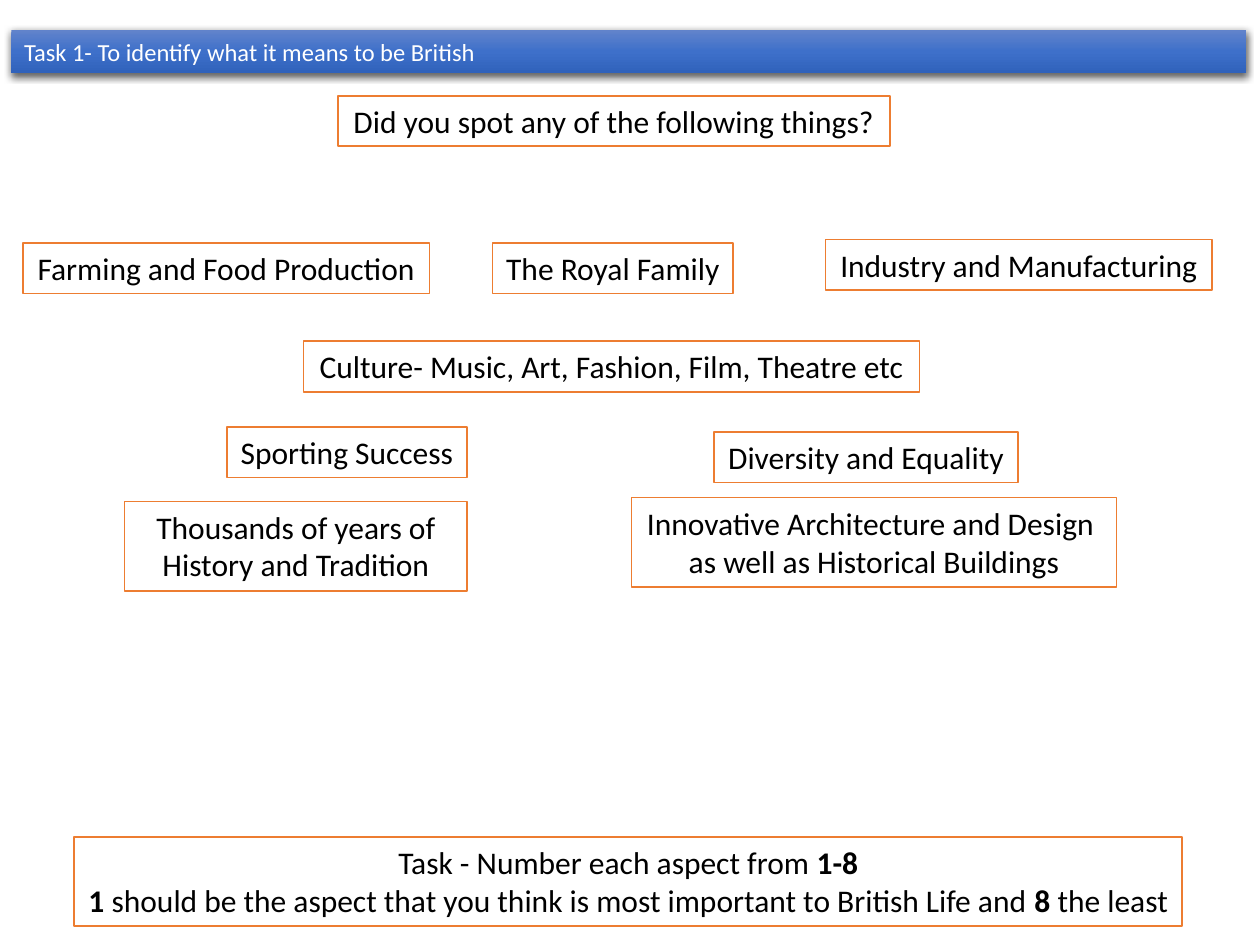
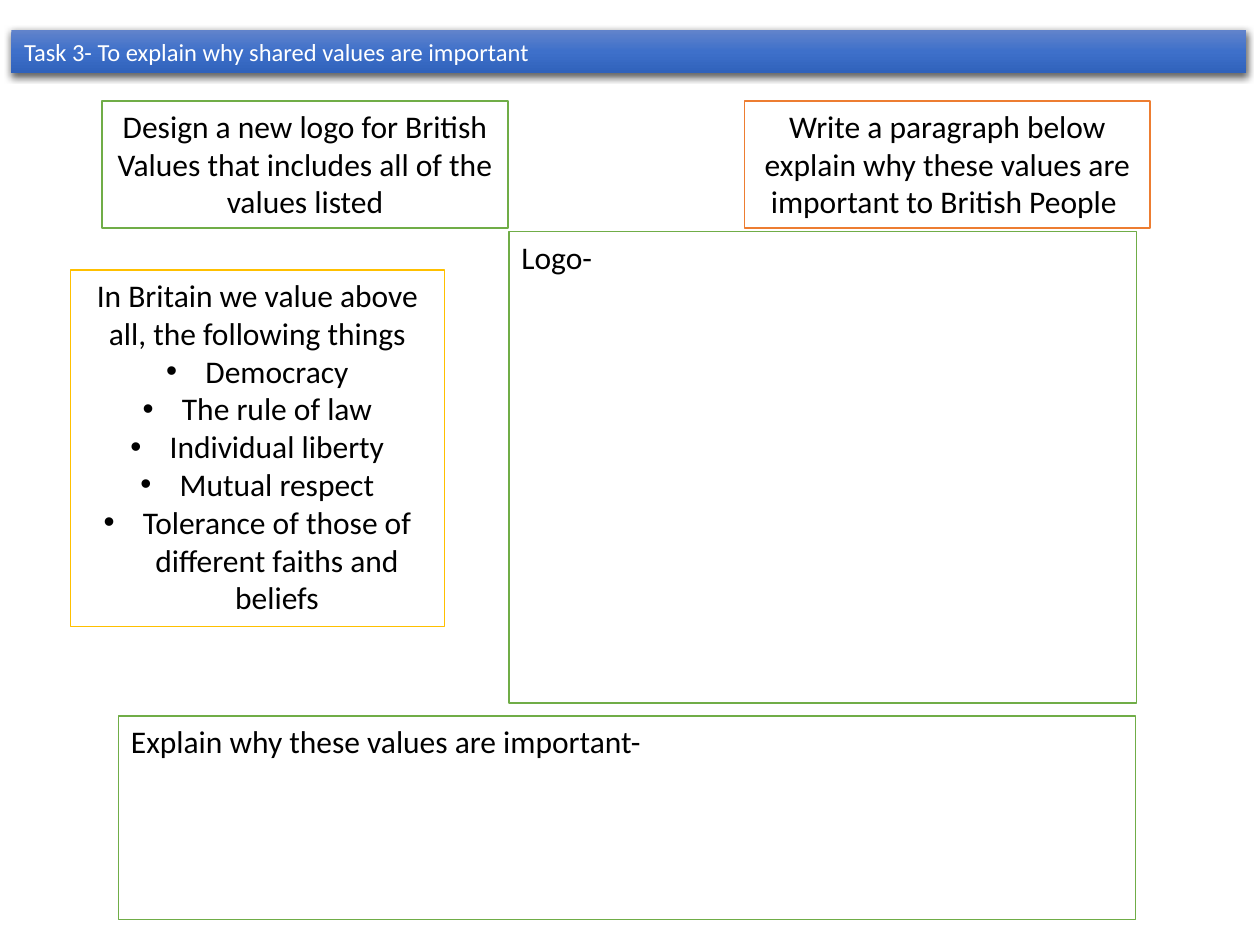
"""Build two worksheet slides on British values."""
import pptx
import pptx.dml.color
import pptx.enum.shapes
import pptx.enum.text
import pptx.oxml
import pptx.oxml.ns
import pptx.util

Cm = pptx.util.Cm
Pt = pptx.util.Pt
ALIGN = pptx.enum.text.PP_ALIGN
ORANGE, GREEN, GOLD = "ED7D31", "70AD47", "FFC000"
WHITE, BLACK = "FFFFFF", "000000"
LOW, TALL = 1.02, 1.8
STOPS = ((0, "6183CB"), (50, "3E70CA"), (100, "3062BB"))


def color(code):
    return pptx.dml.color.RGBColor.from_string(code)


def add_xml(parent, body):
    name, rest = body[1:].split(" ", 1)
    parent.append(pptx.oxml.parse_xml(
        f"<{name} {pptx.oxml.ns.nsdecls('a')} {rest}"))


def write(shape, text, size=18, ink=BLACK, align=ALIGN.CENTER, wrap=True):
    frame = shape.text_frame
    frame.word_wrap = wrap
    frame.auto_size = pptx.enum.text.MSO_AUTO_SIZE.NONE
    frame.vertical_anchor = pptx.enum.text.MSO_ANCHOR.TOP
    for num, line in enumerate(text.split("\n")):
        para = frame.add_paragraph() if num else frame.paragraphs[0]
        para.alignment = align
        if line.startswith("• "):
            line = line[2:]
            props = para._p.get_or_add_pPr()
            props.set("marL", str(Cm(0.79)))
            props.set("indent", str(Cm(-0.79)))
            add_xml(props, '<a:buFont typeface="Arial"/>')
            add_xml(props, '<a:buChar char="•"/>')
        for part, words in enumerate(line.split("*")):
            if words:
                run = para.add_run()
                run.text = words
                run.font.name = "Calibri"
                run.font.size = Pt(size)
                run.font.bold = part % 2 == 1
                run.font.color.rgb = color(ink)


class Deck:
    def __init__(self):
        self.file = pptx.Presentation()
        self.file.slide_width = Cm(25.4)
        self.file.slide_height = Cm(19.05)
        self.slide = None

    def start(self, title):
        self.slide = self.file.slides.add_slide(self.file.slide_layouts[5])
        band = self.slide.shapes.title
        band.left, band.top = Cm(0.23), Cm(0.61)
        band.width, band.height = Cm(24.89), Cm(0.86)
        stops = "".join(
            f'<a:gs pos="{pos * 1000}"><a:srgbClr val="{code}"/></a:gs>'
            for pos, code in STOPS)
        props = band._element.spPr
        add_xml(props, f'<a:gradFill rotWithShape="1"><a:gsLst>{stops}</a:gsLst>'
                       '<a:lin ang="5400000" scaled="0"/></a:gradFill>')
        add_xml(props, '<a:effectLst ><a:outerShdw '
                       f'blurRad="{Pt(4.5)}" dist="{Pt(1.5)}" dir="5400000" '
                       'algn="ctr" rotWithShape="0"><a:srgbClr val="000000">'
                       '<a:alpha val="63000"/></a:srgbClr></a:outerShdw>'
                       '</a:effectLst>')
        write(band, title, size=14, ink=WHITE, align=ALIGN.LEFT)

    def box(self, text, left, top, width, height=LOW, edge=ORANGE, **style):
        shape = self.slide.shapes.add_shape(
            pptx.enum.shapes.MSO_SHAPE.RECTANGLE,
            Cm(left), Cm(top), Cm(width), Cm(height))
        shape.shadow.inherit = False
        shape.fill.solid()
        shape.fill.fore_color.rgb = color(WHITE)
        shape.line.color.rgb = color(edge)
        shape.line.width = Pt(1)
        write(shape, text, **style)


def main():
    deck = Deck()
    deck.start("Task 1- To identify what it means to be British")
    deck.box("Thousands of years of History and Tradition",
             2.51, 10.11, 6.91, TALL)
    for label in (
        ("The Royal Family", 9.93, 4.9, 4.85),
        ("Industry and Manufacturing", 16.64, 4.83, 7.8),
        ("Culture- Music, Art, Fashion, Film, Theatre etc", 6.12, 6.88, 12.42),
        ("Sporting Success", 4.57, 8.61, 4.85),
        ("Diversity and Equality", 14.4, 8.71, 6.12),
        ("Innovative Architecture and Design \nas well as Historical Buildings",
         12.73, 10.03, 9.78, TALL),
        ("Farming and Food Production", 0.46, 4.9, 8.2),
        ("Did you spot any of the following things?", 6.81, 1.93, 11.13),
        ("Task - Number each aspect from *1-8*\n*1* should be the aspect that "
         "you think is most important to British Life and* 8 *the least",
         1.5, 16.87, 22.33, TALL),
    ):
        deck.box(*label, wrap=False)

    deck.start("Task 3- To explain why shared values are important")
    deck.box("Design a new logo for British Values that includes all of the "
             "values listed", 2.06, 2.03, 8.18, 2.57, GREEN)
    deck.box("Write a paragraph below explain why these values are important "
             "to British People ", 15.01, 2.03, 8.18, 2.57)
    deck.box("Logo-", 10.26, 4.67, 12.65, 9.5, GREEN, align=ALIGN.LEFT)
    deck.box("Explain why these values are important-",
             2.39, 14.43, 20.5, 4.11, GREEN, align=ALIGN.LEFT)
    deck.box("In Britain we value above all, the following things\n"
             "• Democracy\n• The rule of law\n• Individual liberty\n"
             "• Mutual respect\n"
             "• Tolerance of those of different faiths and beliefs",
             1.42, 5.44, 7.54, 7.19, GOLD)
    deck.file.save("out.pptx")


if __name__ == "__main__":
    main()
